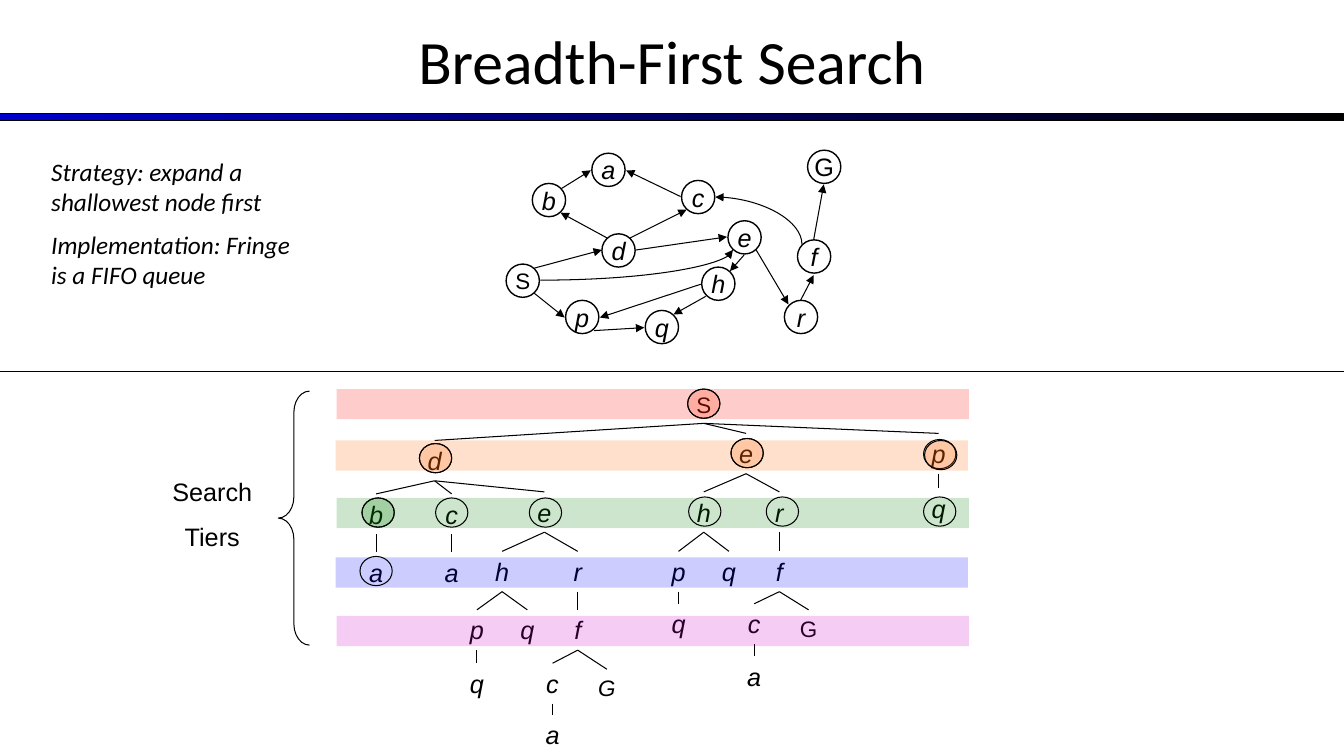
from lxml import etree
from pptx import Presentation
from pptx.dml.color import RGBColor
from pptx.enum.shapes import MSO_CONNECTOR as Link, MSO_SHAPE as Kind
from pptx.enum.text import MSO_ANCHOR as Anchor, PP_ALIGN as Align
from pptx.oxml.ns import qn
from pptx.util import Cm, Pt

# All places and sizes below are in inches.
WIDE, HIGH = 13.33, 7.5
BLACK = "000000"
TITLE = "Breadth-First Search"
NOTES = ["Strategy: expand a shallowest node first",
         "Implementation: Fringe is a FIFO queue"]
TIERS = ["Search", "Tiers"]

# Search tree: letter, centre x, top y, children
TREE = ("S", 6.98, 3.83, [
    ("d", 4.31, 4.37, [
        ("b", 3.73, 4.9, [("a", 3.73, 5.48, [])]),
        ("c", 4.48, 4.9, [("a", 4.48, 5.48, [])]),
        ("e", 5.4, 4.88, [
            ("h", 4.98, 5.47, [
                ("p", 4.73, 6.05, [("q", 4.73, 6.58, [])]),
                ("q", 5.23, 6.05, [])]),
            ("r", 5.73, 5.47, [
                ("f", 5.73, 6.05, [
                    ("c", 5.48, 6.58, [("a", 5.48, 7.09, [])]),
                    ("G", 6.02, 6.64, [])])])])]),
    ("e", 7.4, 4.3, [
        ("h", 6.98, 4.88, [
            ("p", 6.73, 5.47, [("q", 6.73, 5.99, [])]),
            ("q", 7.23, 5.47, [])]),
        ("r", 7.73, 4.88, [
            ("f", 7.73, 5.47, [
                ("c", 7.48, 5.99, [("a", 7.48, 6.51, [])]),
                ("G", 8.02, 6.05, [])])])]),
    ("p", 9.31, 4.3, [("q", 9.31, 4.84, [])])])
UPRIGHT = {("S", 6.98), ("G", 8.02)}
SPAN = {"S": 1.08, "G": 0.83}

# State graph: letter -> left, top of its circle
STATES = {
    "S": (5.02, 2.62), "G": (8.01, 1.49), "d": (5.97, 2.32),
    "b": (5.28, 1.82), "p": (5.61, 2.98), "q": (6.4, 3.08),
    "c": (6.76, 1.79), "e": (7.22, 2.19), "h": (6.96, 2.65),
    "a": (5.87, 1.52), "f": (7.91, 2.38), "r": (7.78, 2.98)}
DISC = 0.33
ARROWS = [
    (5.3, 2.91, 5.6, 3.15), (5.89, 3.28, 6.39, 3.25),
    (7, 2.94, 6.68, 3.12), (6.95, 2.82, 5.95, 3.15),
    (7.38, 2.53, 7.24, 2.69), (7.5, 2.48, 7.82, 3.02),
    (7.94, 2.98, 8.07, 2.73), (8.07, 2.38, 8.17, 1.83),
    (5.3, 2.66, 5.97, 2.48), (6.02, 2.36, 5.56, 2.11),
    (5.57, 1.87, 5.86, 1.69), (6.75, 1.95, 6.21, 1.69),
    (6.25, 2.36, 6.81, 2.08), (6.31, 2.48, 7.21, 2.35)]
# Curved arrows: ends before turning, turn in degrees
CURVES = [((7.76, 1.76, 7.29, 2.62), 90), ((5.36, 2.78, 7.27, 2.48), 0)]

BANDS = [(3.34, 3.86, "FF0000"), (3.33, 4.37, "FF6600"),
         (3.34, 4.94, "008000"), (3.33, 5.53, "0000FF"),
         (3.34, 6.11, "CC00CC")]
RINGS = [(6.82, 3.86), (4.16, 4.4), (7.25, 4.35), (9.16, 4.36),
         (3.59, 4.94), (4.32, 4.94), (5.25, 4.94), (6.83, 4.93),
         (7.6, 4.93), (9.16, 4.93), (3.57, 5.52)]
TINTS = [(6.82, 3.86, "FF3300"), (4.16, 4.4, "FF6600"),
         (7.25, 4.35, "FF6600"), (9.17, 4.37, "FF6600"),
         (3.59, 4.94, "008000")]

deck = Presentation()


def cm(*inches):
    return [Cm(v * 2.54) for v in inches]


def paint(color, tone):
    color.rgb = RGBColor.from_string(tone)


deck.slide_width, deck.slide_height = cm(WIDE, HIGH)
slide = deck.slides.add_slide(deck.slide_layouts[6])
shapes = slide.shapes


def write(shape, lines, size, font="Arial", italic=False,
          align=Align.CENTER, gap=0):
    frame = shape.text_frame
    frame.word_wrap = True
    frame.text = "\n".join(lines)
    for i, para in enumerate(frame.paragraphs):
        para.alignment = align
        para.space_before = Pt(gap if i else 0)
        para.font.name, para.font.size = font, Pt(size)
        para.font.italic = italic
        paint(para.font.color, BLACK)
    return frame


def label(box, lines, size, **style):
    shape = shapes.add_textbox(*cm(*box))
    write(shape, lines, size, **style)
    return shape


def draw(kind, box, tint=None, edge=0.75):
    """Add a shape, with a tint at 20% opacity if given."""
    shape = shapes.add_shape(kind, *cm(*box))
    shape.shadow.inherit = False
    if tint:
        shape.fill.solid()
        paint(shape.fill.fore_color, tint)
        tone = shape.fill._xPr.find(".//" + qn("a:srgbClr"))
        etree.SubElement(tone, qn("a:alpha"), val="20000")
    else:
        shape.fill.background()
    if edge:
        shape.line.width = Pt(edge)
        paint(shape.line.color, BLACK)
    else:
        shape.line.fill.background()
    return shape


def join(ends, kind=Link.STRAIGHT, arrow=False):
    line = shapes.add_connector(kind, *cm(*ends))
    line.line.width = Pt(0.75)
    paint(line.line.color, BLACK)
    if arrow:
        etree.SubElement(line.line._get_or_add_ln(), qn("a:tailEnd"),
                         type="triangle")
    etree.SubElement(line._element.spPr, qn("a:effectLst"))
    return line


def grow(node, parent=None):
    """Add a tree node, its link to the parent, and its subtree."""
    letter, x, top, kids = node
    wide = SPAN.get(letter, 0.42)
    small = letter in SPAN
    box = label((x - wide / 2, top, wide, 0.37 if small else 0.4), [letter],
                16 if small else 18, italic=(letter, x) not in UPRIGHT)
    if parent:
        line = join((x, top, x, top))
        line.begin_connect(parent, 2)
        line.end_connect(box, 0)
    for kid in kids:
        grow(kid, box)


# Title and rules
bar = draw(Kind.RECTANGLE, (0, 1.13, WIDE, 0.07))
bar.fill.gradient()
bar.fill.gradient_angle = 0
for stop, tone in zip(bar.fill.gradient_stops, ("0000CC", BLACK)):
    paint(stop.color, tone)
title = label((0, -0.03, WIDE, 1.25), [TITLE], 44, font="Calibri")
title.text_frame.vertical_anchor = Anchor.MIDDLE
join((0, 3.69, WIDE, 3.69))
label((0.41, 1.5, 2.59, 1.46), NOTES, 18, font="Calibri", italic=True,
      align=Align.LEFT, gap=9)

# State graph
for letter, spot in STATES.items():
    disc = draw(Kind.FLOWCHART_CONNECTOR, (*spot, DISC, DISC), edge=1)
    frame = write(disc, [letter], 16 if letter == "S" else 18,
                  italic=letter.islower())
    frame.word_wrap = False
    frame.vertical_anchor = Anchor.MIDDLE
    frame.margin_left = frame.margin_right = 0
    frame.margin_top = frame.margin_bottom = 0
for ends in ARROWS:
    join(ends, arrow=True)
for ends, turn in CURVES:
    form = join(ends, Link.CURVE, arrow=True)._element.spPr
    form.find(qn("a:prstGeom")).set("prst", "curvedConnector2")
    form.find(qn("a:xfrm")).set("rot", str(turn * 60000))

# Search tree and its tiers
grow(TREE)
for left, top, tint in BANDS:
    draw(Kind.RECTANGLE, (left, top, 6.27, 0.3), tint, edge=0)
brace = draw(Kind.LEFT_BRACE, (2.76, 3.88, 0.31, 2.52))
brace.adjustments[0] = 0.68
label((1.58, 4.68, 1.05, 0.86), TIERS, 18, gap=10)
for left, top, *tint in RINGS + TINTS:
    draw(Kind.OVAL, (left, top, 0.32, 0.29), *tint)

deck.save("out.pptx")
